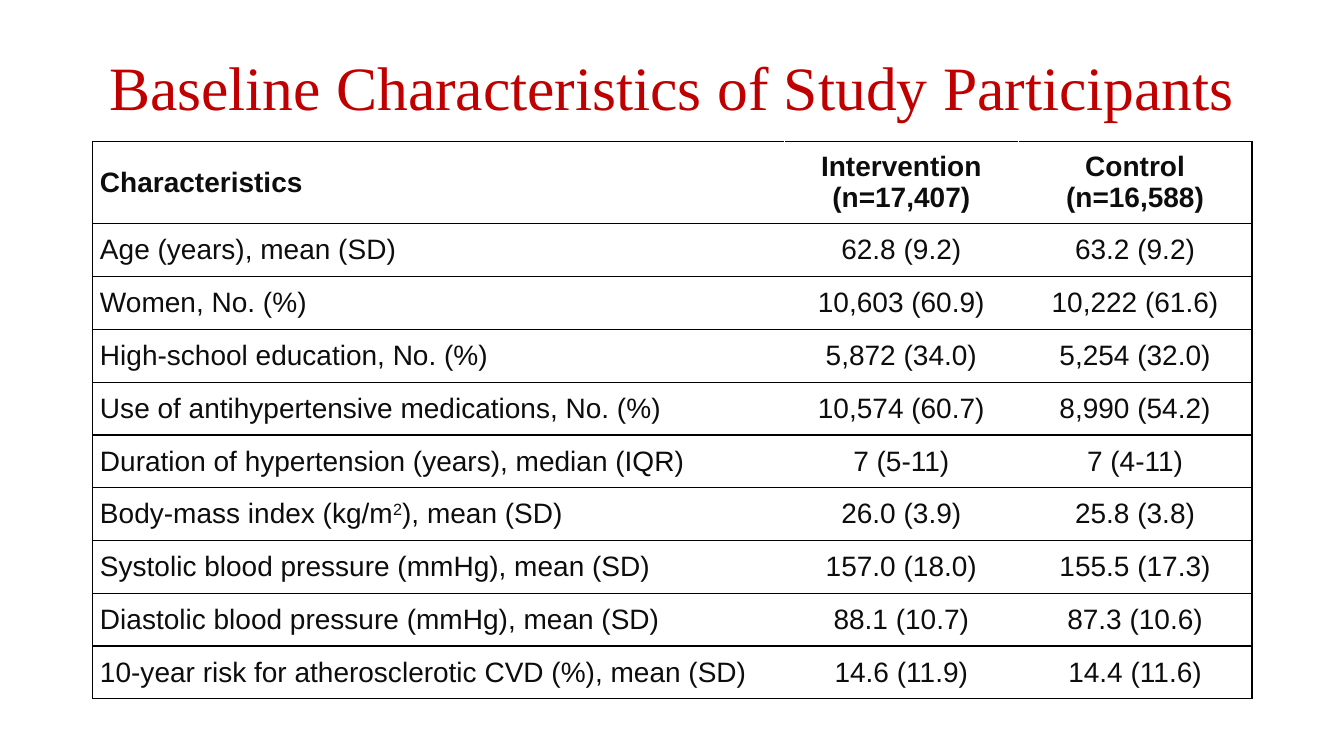
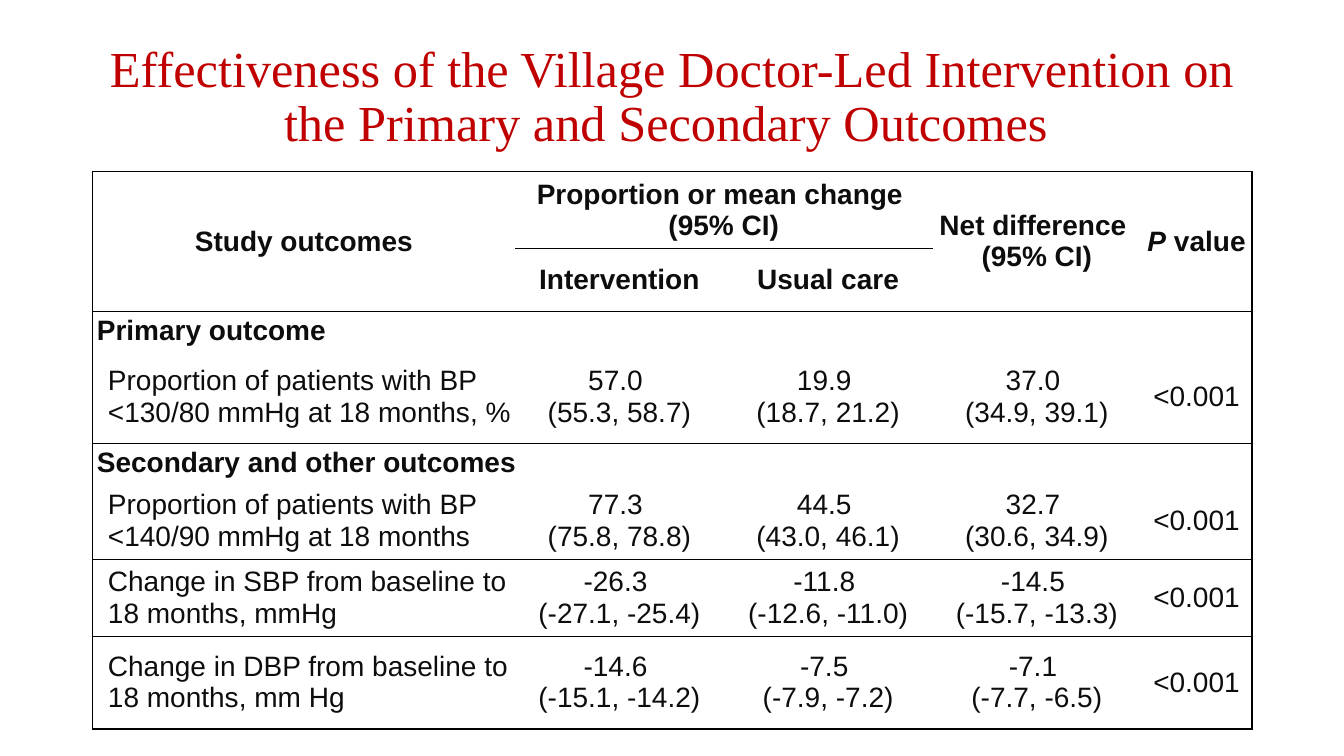
"""Build two trial-result slides, each a red serif title above a ruled table."""
from lxml import etree
from pptx import Presentation
from pptx import util as u
from pptx.dml.color import RGBColor
from pptx.enum import text
from pptx.oxml.ns import qn

COLORS = {"title": "C00000", "text": "0D0D0D", "rule": "000000", "paper": "FFFFFF"}
LEFT, WIDTH = 2.34, 29.21


def style_run(r, font, size, color, bold=False):
    r.font.name = font
    r.font.size = u.Pt(size)
    r.font.bold = bold
    r.font.color.rgb = RGBColor.from_string(COLORS[color])


def set_border(cell, side, color):
    ln = etree.SubElement(cell._tc.get_or_add_tcPr(), qn(f"a:ln{side}"), w=str(u.Pt(1)))
    if color:
        fill = etree.SubElement(ln, qn("a:solidFill"))
        etree.SubElement(fill, qn("a:srgbClr"), val=COLORS[color])
    else:
        etree.SubElement(ln, qn("a:noFill"))


baseline_rows = [
    ["Characteristics", "Intervention\n(n=17,407)", "Control\n(n=16,588)"],
    ["Age (years), mean (SD)", "62.8 (9.2)", "63.2 (9.2)"],
    ["Women, No. (%)", "10,603 (60.9)", "10,222 (61.6)"],
    ["High-school education, No. (%)", "5,872 (34.0)", "5,254 (32.0)"],
    ["Use of antihypertensive medications, No. (%)", "10,574 (60.7)", "8,990 (54.2)"],
    ["Duration of hypertension (years), median (IQR)", "7 (5-11)", "7 (4-11)"],
    ["Body-mass index (kg/m|2|), mean (SD)", "26.0 (3.9)", "25.8 (3.8)"],
    ["Systolic blood pressure (mmHg), mean (SD)", "157.0 (18.0)", "155.5 (17.3)"],
    ["Diastolic blood pressure (mmHg), mean (SD)", "88.1 (10.7)", "87.3 (10.6)"],
    ["10-year risk for atherosclerotic CVD (%), mean (SD)", "14.6 (11.9)", "14.4 (11.6)"],
]

outcome_rows = [
    ["Study outcomes", "Proportion or mean change \n(95% CI)", "",
     "Net difference \n(95% CI)", "|P| value"],
    ["", "Intervention", "Usual care", "", ""],
    ["Primary outcome", "", "", "", ""],
    ["Proportion of patients with BP <130/80 mmHg at 18 months, %",
     "57.0 \n(55.3, 58.7)", "19.9 \n(18.7, 21.2)", "37.0 \n(34.9, 39.1)", "<0.001"],
    ["Secondary and other outcomes", "", "", "", ""],
    ["Proportion of patients with BP <140/90 mmHg at 18 months",
     "77.3 \n(75.8, 78.8)", "44.5 \n(43.0, 46.1)", "32.7 \n(30.6, 34.9)", "<0.001"],
    ["Change in SBP from baseline to 18 months, mmHg",
     "-26.3 \n(-27.1, -25.4)", "-11.8 \n(-12.6, -11.0)", "-14.5 \n(-15.7, -13.3)", "<0.001"],
    ["Change in DBP from baseline to 18 months, mm Hg",
     "-14.6 \n(-15.1, -14.2)", "-7.5 \n(-7.9, -7.2)", "-7.1 \n(-7.7, -6.5)", "<0.001"],
]

slides = [
    dict(title="Baseline Characteristics of Study Participants ", size=44,
         title_top=1.02, table_top=3.56, rows=baseline_rows,
         widths=[17.43, 5.89, 5.89], heights=[2.08] + [1.33] * 9,
         merges=[], bold={0}, left_from=0, indent=0, inset=0.18, divider="paper",
         rules={(edge, c) for edge in range(11) for c in range(3)}),
    dict(title="Effectiveness of the Village Doctor-Led Intervention on "
               "the Primary and Secondary Outcomes ", size=36,
         title_top=0.64, table_top=4.32, rows=outcome_rows,
         widths=[10.64, 5.26, 5.26, 5.26, 2.79],
         heights=[1.94, 1.59, 0.97, 2.36, 0.97, 1.94, 1.94, 2.34],
         merges=[(0, 0, 1, 0), (0, 1, 0, 2), (0, 3, 1, 3), (0, 4, 1, 4),
                 (2, 0, 2, 4), (4, 0, 4, 4)],
         bold={0, 1, 2, 4}, left_from=2, indent=0.28, inset=0.1, divider=None,
         rules={(edge, c) for edge in (0, 2, 4, 6, 7, 8) for c in range(5)} | {(1, 1), (1, 2)}),
]

prs = Presentation()
prs.slide_width, prs.slide_height = u.Cm(33.87), u.Cm(19.05)

for d in slides:
    s = prs.slides.add_slide(prs.slide_layouts[5])
    sp = s.shapes.title
    sp.left, sp.top = u.Cm(LEFT), u.Cm(d["title_top"])
    sp.width, sp.height = u.Cm(WIDTH), u.Cm(d["table_top"] - d["title_top"])
    tf = sp.text_frame
    tf.word_wrap = True
    tf.auto_size = text.MSO_AUTO_SIZE.NONE
    tf.vertical_anchor = text.MSO_ANCHOR.MIDDLE
    p = tf.paragraphs[0]
    p.alignment = text.PP_ALIGN.CENTER
    p.line_spacing = 0.9
    r = p.add_run()
    r.text = d["title"]
    style_run(r, "Times New Roman", d["size"], "title")

    rows, widths, heights = d["rows"], d["widths"], d["heights"]
    table = s.shapes.add_table(len(rows), len(widths), u.Cm(LEFT), u.Cm(d["table_top"]),
                               u.Cm(WIDTH), u.Cm(sum(heights))).table
    table.first_row = table.horz_banding = False
    for column, width in zip(table.columns, widths):
        column.width = u.Cm(width)
    for row, height in zip(table.rows, heights):
        row.height = u.Cm(height)
    for top, left, bottom, right in d["merges"]:
        table.cell(top, left).merge(table.cell(bottom, right))

    for i, values in enumerate(rows):
        for j, value in enumerate(values):
            cell = table.cell(i, j)
            cell.vertical_anchor = text.MSO_ANCHOR.MIDDLE
            cell.margin_left = cell.margin_right = u.Cm(d["inset"])
            cell.margin_top = cell.margin_bottom = 0
            last_col, last_row = j + cell.span_width, i + cell.span_height
            set_border(cell, "L", "rule" if j == 0 else d["divider"])
            set_border(cell, "R", "rule" if last_col == len(widths) else d["divider"])
            set_border(cell, "T", "rule" if (i, j) in d["rules"] else None)
            set_border(cell, "B", "rule" if (last_row, j) in d["rules"] else None)
            cell.fill.solid()
            cell.fill.fore_color.rgb = RGBColor.from_string(COLORS["paper"])
            if not value:
                continue

            is_label = j == 0 and i >= d["left_from"]
            tf = cell.text_frame
            for k, line in enumerate(value.split("\n")):
                p = tf.add_paragraph() if k else tf.paragraphs[0]
                p.alignment = text.PP_ALIGN.LEFT if is_label else text.PP_ALIGN.CENTER
                if is_label and i not in d["bold"]:
                    p._p.get_or_add_pPr().set("marL", str(u.Cm(d["indent"])))
                for n, part in enumerate(line.split("|")):
                    if not part:
                        continue
                    r = p.add_run()
                    r.text = part
                    style_run(r, "Arial", 20, "text", i in d["bold"])
                    if n == 1 and part.isdigit():
                        r._r.get_or_add_rPr().set("baseline", "30000")
                    elif n == 1:
                        r.font.italic = True

prs.save("out.pptx")
